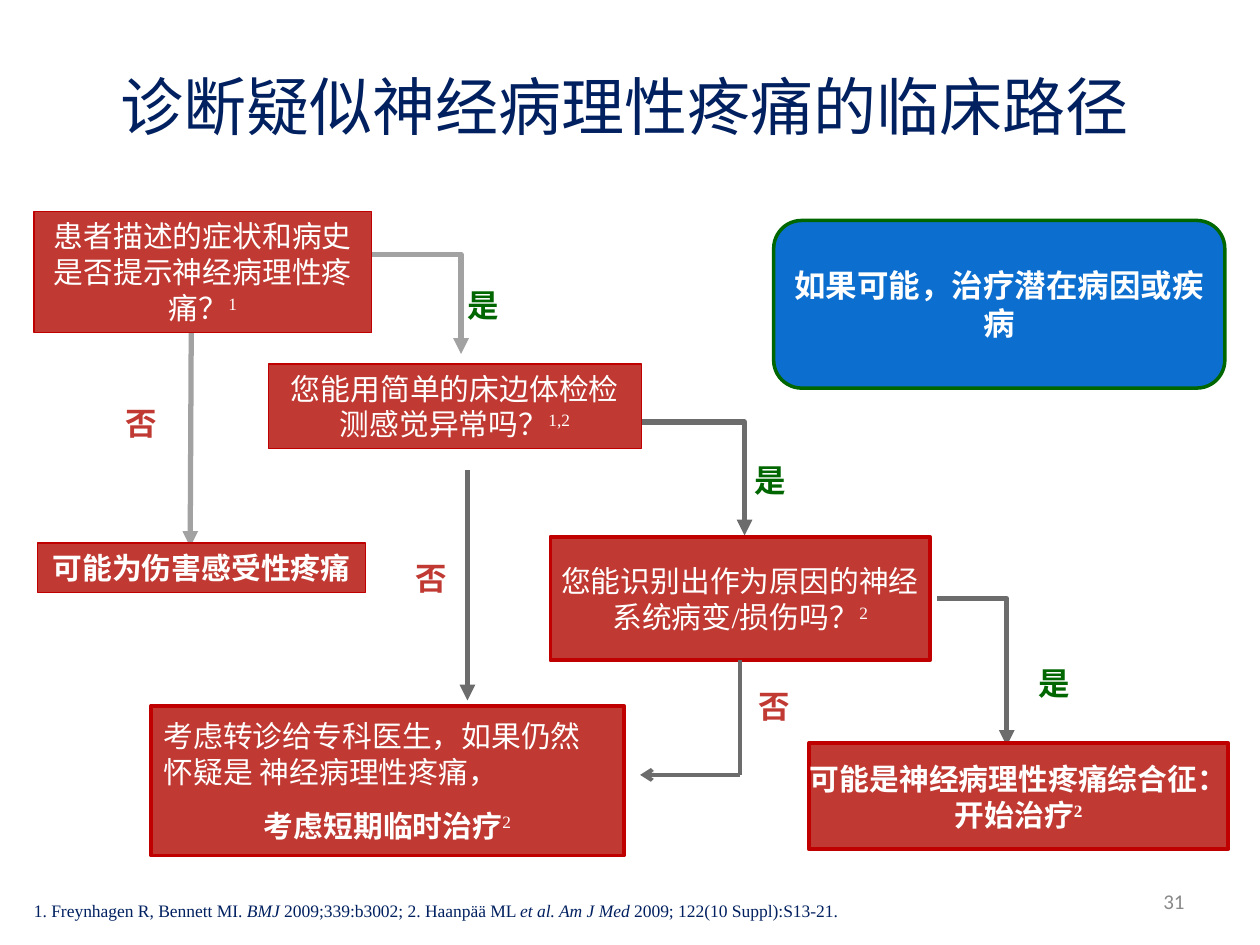
from lxml.etree import SubElement
from pptx import Presentation
from pptx.dml.color import RGBColor
from pptx.enum.shapes import MSO_CONNECTOR as CONNECTOR, MSO_SHAPE as SHAPE
from pptx.enum.text import MSO_ANCHOR as ANCHOR, PP_ALIGN as ALIGN
from pptx.oxml.ns import qn
from pptx.util import Pt

SERIF = "Times New Roman"
NAVY, RED, GREEN, WHITE = "002060", "C03932", "006600", "FFFFFF"
DARK, LIGHT = "6C6C6C", "A2A2A2"


def color(value):
    return RGBColor.from_string(value)


def add_line(kind, points, line_color, width=3, head=None):
    connector = slide.shapes.add_connector(kind, *[Pt(value) for value in points])
    connector.line.color.rgb = color(line_color)
    connector.line.width = Pt(width)
    properties = connector._element.spPr
    if kind == CONNECTOR.ELBOW:
        properties.find(qn("a:prstGeom")).set("prst", "bentConnector2")
    if head:
        SubElement(properties.find(qn("a:ln")), qn("a:tailEnd"), type=head)
    SubElement(properties, qn("a:effectLst"))
    return connector


presentation = Presentation()
presentation.slide_width, presentation.slide_height = Pt(720), Pt(540)
slide = presentation.slides.add_slide(presentation.slide_layouts[5])

# Title
title = slide.shapes.title
title.left, title.top, title.width, title.height = Pt(54), Pt(15), Pt(606), Pt(90)
title.text_frame.text = "诊断疑似神经病理性疼痛的临床路径"
title.text_frame.vertical_anchor = ANCHOR.MIDDLE
paragraph = title.text_frame.paragraphs[0]
paragraph.alignment = ALIGN.CENTER
indents = paragraph._p.get_or_add_pPr()
indents.set("marL", str(Pt(72)))
indents.set("indent", str(-Pt(72)))
paragraph.font.size, paragraph.font.name = Pt(36), SERIF
paragraph.font.color.rgb = color(NAVY)

# Arrows that run under the boxes
for kind, points, line_color in [
    (CONNECTOR.ELBOW, (195.8, 145.4, 263.5, 202.3), LIGHT),
    (CONNECTOR.ELBOW, (356.4, 241.2, 425.5, 306), DARK),
    (CONNECTOR.ELBOW, (535.7, 342, 575.3, 426.2), DARK),
    (CONNECTOR.STRAIGHT, (109.4, 167.8, 108.7, 312.5), LIGHT),
    (CONNECTOR.STRAIGHT, (267.1, 268.6, 267.1, 400.3), DARK),
]:
    add_line(kind, points, line_color, head="triangle")

# Yes and no labels
for text, left, top, text_color in [
    ("是", 259.9, 159.8, GREEN),
    ("是", 424.1, 259.9, GREEN),
    ("是", 586.1, 375.8, GREEN),
    ("否", 64.8, 227.5, RED),
    ("否", 230.4, 316.1, RED),
    ("否", 426.2, 388.8, RED),
]:
    label = slide.shapes.add_textbox(Pt(left), Pt(top), Pt(32.4), Pt(28.8))
    label.text_frame.word_wrap = False
    paragraph = label.text_frame.paragraphs[0]
    paragraph.text = text
    paragraph.font.size, paragraph.font.name, paragraph.font.bold = Pt(18), SERIF, True
    paragraph.font.color.rgb = color(text_color)

# Question and result boxes: position, line width, wrap, anchor,
# then paragraphs as (text, reference, bold, alignment)
MIDDLE, TOP, CENTER, LEFT = ANCHOR.MIDDLE, ANCHOR.TOP, ALIGN.CENTER, ALIGN.LEFT
boxes = {}
for name, position, width, wrap, anchor, lines in [
    ("referral", (86.4, 403.2, 270, 85.7), 2.25, False, MIDDLE,
     [("考虑转诊给专科医生，如果仍然", "", False, LEFT),
      ("怀疑是 神经病理性疼痛，", "", False, LEFT),
      ("考虑短期临时治疗", "2", True, CENTER)]),
    ("nociceptive", (21.6, 310.3, 187.2, 28.1), 0.75, False, TOP,
     [("可能为伤害感受性疼痛", "", True, CENTER)]),
    ("bedside", (153.4, 208.1, 213.1, 48.2), 0.75, True, TOP,
     [("您能用简单的床边体检检测感觉异常吗？", "1,2", False, CENTER)]),
    ("lesion", (314.6, 306.7, 216.7, 70.6), 2.25, False, MIDDLE,
     [("您能识别出作为原因的神经", "", False, CENTER),
      ("系统病变/损伤吗？", "2", False, CENTER)]),
    ("neuropathic", (462.2, 424.8, 239.8, 60.5), 2.25, False, MIDDLE,
     [("可能是神经病理性疼痛综合征：", "", True, CENTER),
      ("开始治疗", "2", True, CENTER)]),
    ("history", (19.4, 121, 193, 69.1), 0.75, True, TOP,
     [("患者描述的症状和病史是否提示神经病理性疼痛？", "1", False, CENTER)]),
    ("cause", (442.1, 126, 257.8, 95.8), 2, True, MIDDLE,
     [("如果可能，治疗潜在病因或疾病", "", True, CENTER)]),
]:
    is_cause = name == "cause"
    shape = slide.shapes.add_shape(
        SHAPE.ROUNDED_RECTANGLE if is_cause else SHAPE.RECTANGLE,
        *[Pt(value) for value in position])
    shape.shadow.inherit = False
    shape.fill.solid()
    shape.fill.fore_color.rgb = color("0C6FCF" if is_cause else RED)
    shape.line.color.rgb = color(GREEN if is_cause else "C00000")
    shape.line.width = Pt(width)
    frame = shape.text_frame
    frame.word_wrap, frame.vertical_anchor = wrap, anchor
    for index, (text, reference, bold, alignment) in enumerate(lines):
        paragraph = frame.add_paragraph() if index else frame.paragraphs[0]
        paragraph.alignment = alignment
        paragraph.font.size = Pt(18 if is_cause else 17)
        paragraph.font.name = SERIF
        paragraph.font.color.rgb = color(WHITE)
        run = paragraph.add_run()
        run.text, run.font.bold = text, bold
        if reference:
            run = paragraph.add_run()
            run.text = reference
            run.font.bold = bold and name != "referral"
            run._r.get_or_add_rPr().set("baseline", "30000")
    boxes[name] = shape
boxes["cause"].adjustments[0] = 0.167
boxes["referral"].text_frame.paragraphs[-1].line_spacing = 1.5

# No path from the lesion question to referral
corner_x, corner_y = 422.95, 442.8
stem = add_line(CONNECTOR.STRAIGHT, (corner_x, 377.3, corner_x, corner_y), DARK, 2.5)
stem.begin_connect(boxes["lesion"], 2)
add_line(CONNECTOR.STRAIGHT, (corner_x, corner_y, 365.8, corner_y), DARK, 2.25, "arrow")

# References
references = slide.shapes.add_textbox(Pt(19.4), Pt(514), Pt(558.7), Pt(12.2))
frame = references.text_frame
frame.word_wrap, frame.vertical_anchor = True, ANCHOR.BOTTOM
frame.margin_left = frame.margin_right = frame.margin_top = frame.margin_bottom = 0
paragraph = frame.paragraphs[0]
paragraph.font.size, paragraph.font.name = Pt(10), SERIF
paragraph.font.color.rgb = color(NAVY)
for text, italic in [
    ("1. Freynhagen R, Bennett MI. ", False),
    ("BMJ", True),
    (" 2009;339:b3002; 2. Haanpää ML ", False),
    ("et al. Am J Med ", True),
    ("2009; 122(10 Suppl):S13-21.", False),
]:
    run = paragraph.add_run()
    run.text, run.font.italic = text, italic

# Slide number
number = slide.shapes.add_textbox(Pt(516), Pt(500.5), Pt(168), Pt(28.75))
number.text_frame.word_wrap = True
number.text_frame.vertical_anchor = ANCHOR.MIDDLE
paragraph = number.text_frame.paragraphs[0]
paragraph.text, paragraph.alignment = "31", ALIGN.RIGHT
paragraph.font.size, paragraph.font.name = Pt(12), "Calibri"
paragraph.font.color.rgb = color("898989")

presentation.save("out.pptx")
